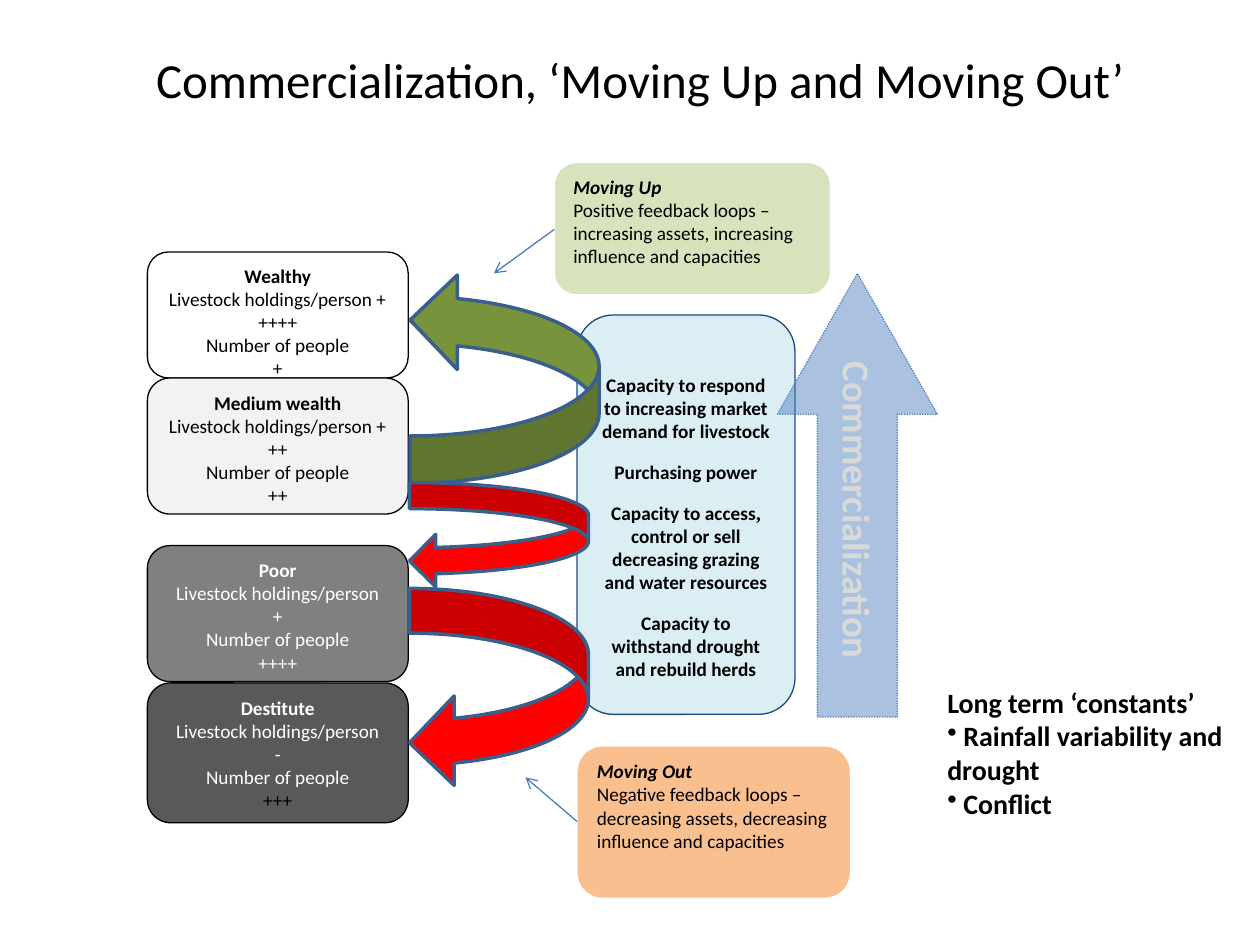
import pptx
import pptx.util
import pptx.dml.color
import pptx.enum.dml
import pptx.enum.shapes
import pptx.enum.text
import pptx.oxml
import pptx.oxml.ns

Inches = pptx.util.Inches
RGBColor = pptx.dml.color.RGBColor
Shape = pptx.enum.shapes.MSO_SHAPE
Align = pptx.enum.text.PP_ALIGN
Anchor = pptx.enum.text.MSO_ANCHOR

BLACK = RGBColor(0x00, 0x00, 0x00)
WHITE = RGBColor(0xFF, 0xFF, 0xFF)
PALE_GREY = RGBColor(0xF2, 0xF2, 0xF2)
LABEL_GREY = RGBColor(0xD9, 0xD9, 0xD9)
MID_GREY = RGBColor(0x80, 0x80, 0x80)
DARK_GREY = RGBColor(0x59, 0x59, 0x59)
PALE_BLUE = RGBColor(0xDA, 0xEE, 0xF3)
NAVY = RGBColor(0x1F, 0x49, 0x7D)
BLUE = RGBColor(0x4F, 0x81, 0xBD)
ARROW_EDGE = RGBColor(0x3A, 0x5F, 0x8C)
POINTER_BLUE = RGBColor(0x4B, 0x7E, 0xBC)
RED = RGBColor(0xFF, 0x00, 0x00)
GREEN = RGBColor(0x77, 0x93, 0x3C)
PALE_GREEN = RGBColor(0xD6, 0xE3, 0xBC)
ORANGE = RGBColor(0xFA, 0xBF, 0x8F)


def add_xml(parent, tag, **attributes):
    element = pptx.oxml.parse_xml(f"<{tag} {pptx.oxml.ns.nsdecls('a')}/>")
    for name, value in attributes.items():
        element.set(name, str(value))
    parent.append(element)


def write(frame, text, size=11, color=BLACK, bold=False, italic=False, font="Calibri",
          align=Align.LEFT, after=0, bullet=None, same_paragraph=False):
    """Add text as a new paragraph, or as a run that continues the last one."""
    paragraph = frame.paragraphs[-1]
    if not same_paragraph:
        if paragraph.runs:
            paragraph = frame.add_paragraph()
        paragraph.alignment = align
        paragraph.space_after = pptx.util.Pt(after)
        if bullet:
            add_xml(paragraph._p.get_or_add_pPr(), "a:buChar", char=bullet)
    run = paragraph.add_run()
    run.text = text
    run.font.name = font
    run.font.size = pptx.util.Pt(size)
    run.font.bold = bold
    run.font.italic = italic
    run.font.color.rgb = color


class SlideBuilder:
    box_line = 0.75
    arrow_line = 2

    def __init__(self, slide):
        self.slide = slide

    def shape(self, kind, left, top, width, height, fill, line, weight=box_line):
        shape = self.slide.shapes.add_shape(
            kind, Inches(left), Inches(top), Inches(width), Inches(height))
        shape.shadow.inherit = False
        shape.fill.solid()
        shape.fill.fore_color.rgb = fill
        shape.line.color.rgb = line
        shape.line.width = pptx.util.Pt(weight)
        return shape

    def box(self, left, top, width, height, fill, line=BLACK):
        """Add a rounded box and return its text frame."""
        frame = self.shape(Shape.FLOWCHART_ALTERNATE_PROCESS,
                           left, top, width, height, fill, line).text_frame
        frame.word_wrap = True
        frame.vertical_anchor = Anchor.TOP
        return frame

    def wealth_group(self, top, height, fill, color, heading, lines, last_color=None):
        frame = self.box(1.17, top, 2.07, height, fill)
        write(frame, heading, color=color, bold=True, align=Align.CENTER)
        for line in lines[:-1]:
            write(frame, line, color=color, align=Align.CENTER)
        write(frame, lines[-1], color=last_color or color, align=Align.CENTER)

    def callout(self, left, top, width, height, fill, heading, text):
        frame = self.box(left, top, width, height, fill, WHITE)
        write(frame, heading, bold=True, italic=True)
        write(frame, text, after=10)

    def loop_arrow(self, kind, left, top, width, height, fill, rotation=0):
        shape = self.shape(kind, left, top, width, height, fill, ARROW_EDGE, self.arrow_line)
        shape.rotation = rotation

    def pointer(self, x1, y1, x2, y2):
        connector = self.slide.shapes.add_connector(
            pptx.enum.shapes.MSO_CONNECTOR.STRAIGHT,
            Inches(x1), Inches(y1), Inches(x2), Inches(y2))
        connector.line.color.rgb = POINTER_BLUE
        connector.line.width = pptx.util.Pt(self.box_line)
        add_xml(connector.line._get_or_add_ln(), "a:tailEnd", type="arrow")
        add_xml(connector._element.spPr, "a:effectLst")

    def text_box(self, left, top, width, height, anchor=Anchor.TOP, rotation=0):
        shape = self.slide.shapes.add_textbox(
            Inches(left), Inches(top), Inches(width), Inches(height))
        shape.rotation = rotation
        shape.text_frame.word_wrap = True
        shape.text_frame.vertical_anchor = anchor
        return shape.text_frame


def add_wealth_groups(builder):
    holdings, people = "Livestock holdings/person", "Number of people"
    builder.wealth_group(2, 1, WHITE, BLACK, "Wealthy",
                         [f"{holdings} +++++", people, "+"])
    builder.wealth_group(3, 1.08, PALE_GREY, BLACK, "Medium wealth",
                         [f"{holdings} +++", people, "++"])
    builder.wealth_group(4.33, 1.08, MID_GREY, WHITE, "Poor",
                         [holdings, "+", people, "++++"])
    builder.wealth_group(5.42, 1.11, DARK_GREY, WHITE, "Destitute",
                         [holdings, "-", people, "+++"], last_color=BLACK)


def add_capacities(builder):
    frame = builder.box(4.58, 2.5, 1.73, 3.17, PALE_BLUE, NAVY)
    frame.margin_top = Inches(0.38)
    style = dict(bold=True, align=Align.CENTER, after=10)
    write(frame, "Capacity to respond to increasing market demand for livestock", **style)
    write(frame, "Purchasing power", **style)
    write(frame, "Capacity to access", **style)
    write(frame, ",", bold=True, font="Times New Roman", same_paragraph=True)
    write(frame, " control or sell decreasing grazing and water resources",
          bold=True, same_paragraph=True)
    write(frame, "Capacity to withstand drought and rebuild herds", **style)


def add_commercialization_arrow(builder):
    arrow = builder.shape(Shape.UP_ARROW, 6.17, 2.17, 1.27, 3.52, BLUE, BLUE)
    arrow.adjustments[0] = 0.5
    arrow.adjustments[1] = 0.88
    arrow.line.dash_style = pptx.enum.dml.MSO_LINE.ROUND_DOT
    add_xml(arrow.fill._xPr.solidFill[0], "a:alpha", val=48000)
    label = builder.text_box(5.31, 3.8, 3, 0.5, Anchor.MIDDLE, rotation=90)
    write(label, "Commercialization", size=22, color=LABEL_GREY, bold=True,
          align=Align.CENTER)


def main():
    presentation = pptx.Presentation()
    presentation.slide_width = Inches(10)
    presentation.slide_height = Inches(7.5)
    builder = SlideBuilder(presentation.slides.add_slide(presentation.slide_layouts[6]))

    title = builder.text_box(0.58, 0, 9, 1.25, Anchor.MIDDLE)
    write(title, "Commercialization, ‘Moving Up and Moving Out’", size=28, align=Align.CENTER)

    add_wealth_groups(builder)
    add_capacities(builder)
    add_commercialization_arrow(builder)

    builder.loop_arrow(Shape.CURVED_LEFT_ARROW, 3.25, 4.67, 1.42, 1.58, RED)
    builder.loop_arrow(Shape.CURVED_UP_ARROW, 3.17, 2.25, 1.67, 1.5, GREEN, rotation=270)
    builder.loop_arrow(Shape.CURVED_LEFT_ARROW, 3.25, 3.83, 1.42, 0.83, RED)

    builder.callout(4.4, 1.29, 2.19, 1.05, PALE_GREEN, "Moving Up",
                    "Positive feedback loops – increasing assets, "
                    "increasing influence and capacities")
    builder.callout(4.58, 5.92, 2.17, 1.21, ORANGE, "Moving Out",
                    "Negative feedback loops – decreasing assets, "
                    "decreasing influence and capacities")
    builder.pointer(4.4, 1.82, 3.92, 2.17)
    builder.pointer(4.58, 6.52, 4.17, 6.17)

    constants = builder.text_box(7.42, 5.39, 2.5, 1.18)
    write(constants, "Long term ‘constants’", size=16, bold=True)
    for constant in (" Rainfall variability and drought", " Conflict"):
        write(constants, constant, size=16, bold=True, bullet="•")

    presentation.save("out.pptx")


if __name__ == "__main__":
    main()
